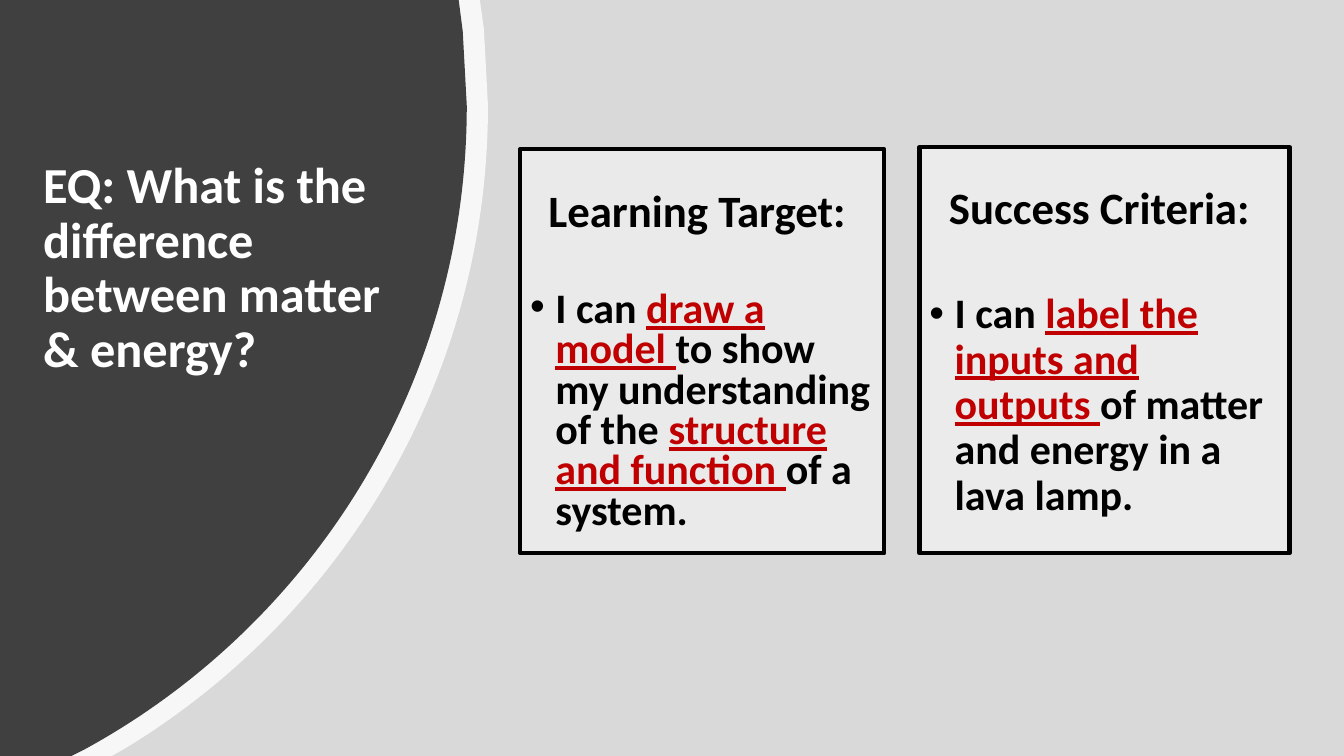
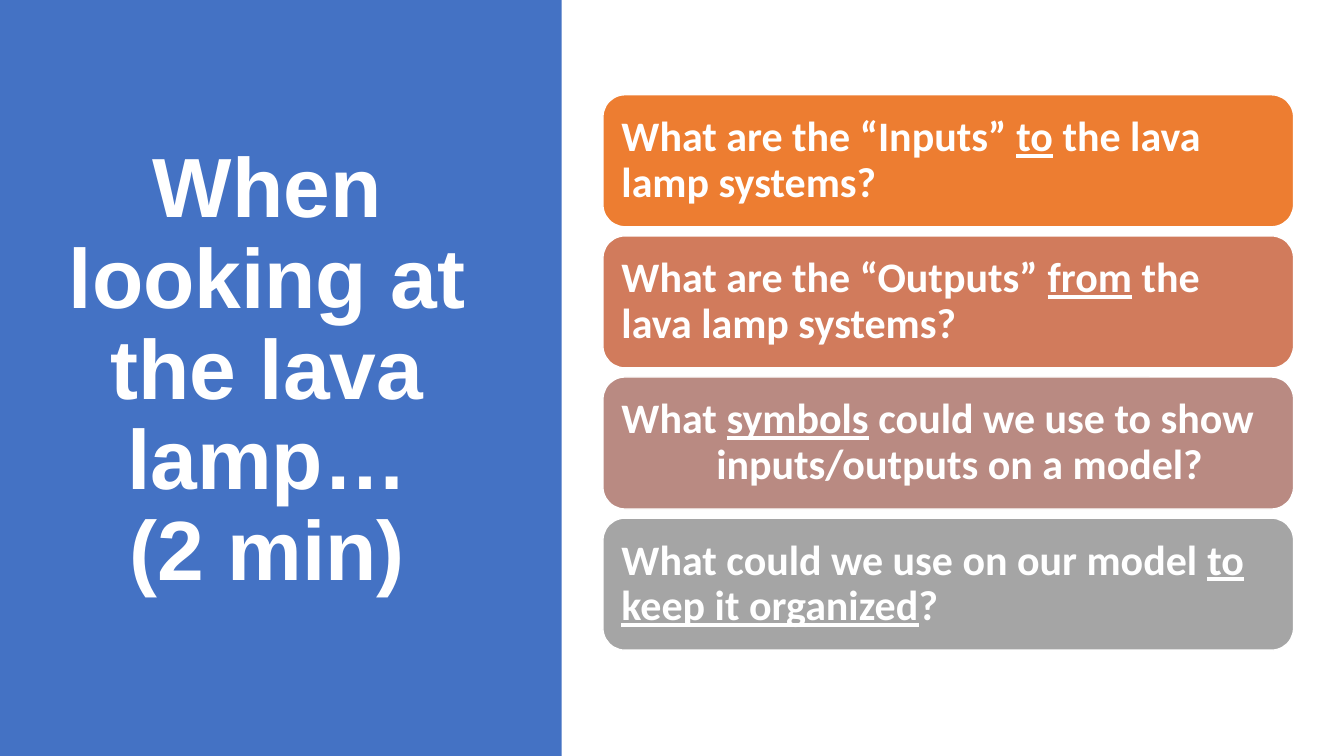
from lxml.etree import SubElement
from pptx import Presentation
from pptx.dml.color import RGBColor
from pptx.enum.shapes import MSO_SHAPE
from pptx.enum.text import MSO_ANCHOR, PP_ALIGN
from pptx.oxml.ns import qn
from pptx.util import Pt

PX = 9144
SLIDE_WIDTH, SLIDE_HEIGHT = 1333, 750
WHITE = RGBColor(0xFF, 0xFF, 0xFF)
BLACK = RGBColor(0x00, 0x00, 0x00)
LIGHT_GREY = RGBColor(0xD9, 0xD9, 0xD9)
DARK_GREY = RGBColor(0x40, 0x40, 0x40)
DARK_RED = RGBColor(0xC0, 0x00, 0x00)
BLUE = RGBColor(0x44, 0x72, 0xC4)
ORANGE = RGBColor(0xED, 0x7D, 0x31)
TERRACOTTA = RGBColor(0xD1, 0x7B, 0x5C)
DUSTY_ROSE = RGBColor(0xB9, 0x8A, 0x82)
MID_GREY = RGBColor(0xA5, 0xA5, 0xA5)
BODY_FONT, HEADLINE_FONT = "Calibri", "Arial"


def emu(*lengths):
    """Turn px lengths into EMU."""
    return [round(length * PX) for length in lengths]


def style_shape(shape, fill, opacity=100, line=None, line_width=1):
    """Give a shape a flat fill, an optional outline and no shadow."""
    shape.shadow.inherit = False
    shape.fill.solid()
    shape.fill.fore_color.rgb = fill
    if opacity < 100:
        color = shape._element.spPr.find(qn("a:solidFill"))[0]
        SubElement(color, qn("a:alpha")).set("val", str(opacity * 1000))
    if line is None:
        shape.line.fill.background()
    else:
        shape.line.color.rgb = line
        shape.line.width = Pt(line_width)


def add_panel(slide, box, fill, kind=MSO_SHAPE.RECTANGLE, **style):
    """Add a styled preset shape filling the box."""
    shape = slide.shapes.add_shape(kind, *emu(*box))
    style_shape(shape, fill, **style)
    return shape


def prepare_frame(shape, anchor, left=10, top=5, right=10, bottom=5):
    """Set wrapping, anchor and margins, and return the text frame."""
    frame = shape.text_frame
    frame.word_wrap = True
    frame.vertical_anchor = anchor
    (frame.margin_left, frame.margin_top,
     frame.margin_right, frame.margin_bottom) = emu(left, top, right, bottom)
    return frame


def write_paragraph(frame, pieces, size, color, accent=None, font=BODY_FONT,
                    align=PP_ALIGN.LEFT, spacing=0.9, before=0):
    """Write bold text whose every second piece is underlined."""
    paragraph = frame.paragraphs[0]
    if paragraph.runs:
        paragraph = frame.add_paragraph()
    paragraph.alignment = align
    paragraph.line_spacing = spacing
    paragraph.space_before = Pt(before)
    for index, piece in enumerate(pieces):
        emphasised = index % 2 == 1
        for line_number, line in enumerate(piece.split("\n")):
            if line_number:
                paragraph.add_line_break()
            run = paragraph.add_run()
            run.text = line
            run.font.name = font
            run.font.size = Pt(size)
            run.font.bold = True
            run.font.underline = emphasised
            run.font.color.rgb = accent if emphasised and accent else color
    return paragraph


def hang_paragraph(paragraph, left, bullet=None):
    """Indent all lines but the first, which may start with a bullet."""
    properties = paragraph._p.get_or_add_pPr()
    properties.set("marL", str(left * PX))
    properties.set("indent", str(-left * PX))
    if bullet:
        SubElement(properties, qn("a:buFont")).set("typeface", "Arial")
        SubElement(properties, qn("a:buChar")).set("char", bullet)


def add_title(slide, box, text, size, anchor, **style):
    """Add a white title."""
    frame = prepare_frame(slide.shapes.add_textbox(*emu(*box)), anchor)
    write_paragraph(frame, [text], size, WHITE, **style)


def add_curved_side(slide, top_right, upper_curve, lower_curve, bottom_right, fill, opacity=100):
    """Add a full-height left region whose right edge is two cubic curves."""
    outline = [(top_right, 0), *upper_curve, *lower_curve,
               (bottom_right, SLIDE_HEIGHT), (0, SLIDE_HEIGHT)]
    builder = slide.shapes.build_freeform(0, 0)
    builder.add_line_segments([tuple(emu(*point)) for point in outline], close=True)
    shape = builder.convert_to_shape()
    segments = list(shape._element.iter(qn("a:lnTo")))
    curve_start = 1 + len(upper_curve)
    curve = segments[curve_start:curve_start + 3]
    cubic = curve[0].makeelement(qn("a:cubicBezTo"))
    curve[0].addprevious(cubic)
    for segment in curve:
        cubic.append(segment[0])
        segment.getparent().remove(segment)
    style_shape(shape, fill, opacity)


def add_goal_card(slide, box, heading, goal, opacity, top_margin, spacing, gap):
    """Add an outlined card with a centred heading and one bulleted goal."""
    card = add_panel(slide, box, WHITE, opacity=opacity, line=BLACK, line_width=3)
    frame = prepare_frame(card, MSO_ANCHOR.TOP, top=top_margin)
    write_paragraph(frame, [heading], 32, BLACK, align=PP_ALIGN.CENTER, spacing=spacing)
    paragraph = write_paragraph(frame, goal, 30, BLACK, DARK_RED, spacing=spacing, before=gap)
    hang_paragraph(paragraph, 25, "•")


def add_question_stack(slide, box, questions, gap=9):
    """Stack equal rounded panels, with one question in each."""
    left, top, width, height = box
    panel_height = (height - gap * (len(questions) - 1)) / len(questions)
    for index, (fill, question, hanging) in enumerate(questions):
        panel_box = (left, top + index * (panel_height + gap), width, panel_height)
        panel = add_panel(slide, panel_box, fill, MSO_SHAPE.ROUNDED_RECTANGLE, line=WHITE)
        frame = prepare_frame(panel, MSO_ANCHOR.MIDDLE, 12, 12, 12, 12)
        hang_paragraph(write_paragraph(frame, question, 30, WHITE), hanging)


def build_goals_slide(slide):
    """Build the essential question slide with its two cards."""
    add_panel(slide, (0, 0, SLIDE_WIDTH, SLIDE_HEIGHT), LIGHT_GREY)
    add_curved_side(slide, 476, [(480, 29), (482, 54), (484, 80), (484, 105)][:1] + [(484, 105)],
                    [(484, 375), (340, 611), (125, 742)], 111, WHITE, 80)
    add_curved_side(slide, 455, [(459, 31), (463, 105)],
                    [(463, 381), (309, 621), (83, 744)], 71, DARK_GREY)
    add_title(slide, (33, 154, 369, 312),
              "EQ: What is the difference between matter & energy?", 36, MSO_ANCHOR.TOP)
    add_goal_card(slide, (516, 148, 361, 401), "Learning Target: ",
                  ["I can ", "draw a model ", "to show my understanding of the ",
                   "structure and function ", "of a system."], 46, 44, 0.8, 39)
    add_goal_card(slide, (912, 146, 367, 403), "Success Criteria: ",
                  ["I can ", "label the inputs and outputs ",
                   "of matter and energy in a lava lamp."], 48, 38, 0.9, 42)


def build_questions_slide(slide):
    """Build the lava lamp slide with its four questions."""
    add_panel(slide, (0, 0, 557, SLIDE_HEIGHT), BLUE)
    add_title(slide, (57, 68, 416, 602), "When looking at the lava lamp…\n(2 min)", 60,
              MSO_ANCHOR.MIDDLE, font=HEADLINE_FONT, align=PP_ALIGN.CENTER)
    add_question_stack(slide, (598, 94, 685, 551), [
        (ORANGE, ["What are the “Inputs” ", "to", " the lava lamp systems?"], 0),
        (TERRACOTTA, ["What are the “Outputs” ", "from", " the lava lamp systems?"], 0),
        (DUSTY_ROSE, ["What ", "symbols",
                      " could we use to show inputs/outputs on a model?"], 94),
        (MID_GREY, ["What could we use on our model ", "to keep it organized", "?"], 0),
    ])


def main():
    """Build and save the presentation."""
    presentation = Presentation()
    presentation.slide_width, presentation.slide_height = emu(SLIDE_WIDTH, SLIDE_HEIGHT)
    for build in (build_goals_slide, build_questions_slide):
        build(presentation.slides.add_slide(presentation.slide_layouts[6]))
    presentation.save("out.pptx")


if __name__ == "__main__":
    main()
